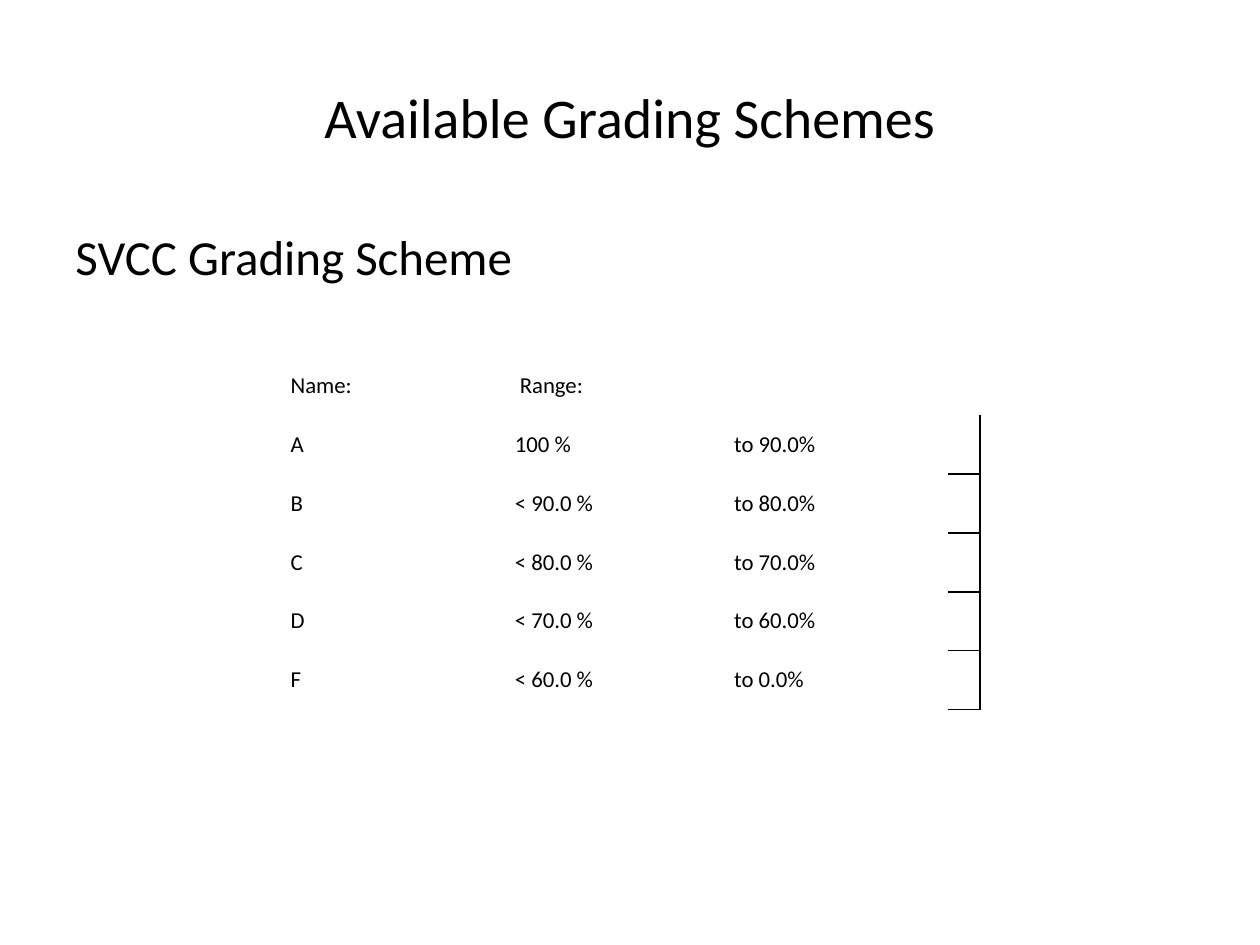
from dataclasses import dataclass

from lxml import etree
from pptx import Presentation
from pptx import util as u
from pptx.dml.color import RGBColor
from pptx.enum import text
from pptx.oxml import ns

COLORS = {"ink": "000000", "paper": "FFFFFF"}
FONT = "Calibri"
NO_GRID_STYLE = "{2D5ABB26-0587-4C30-8999-92F81FD0307C}"
COLUMN_WIDTHS = (4.62, 4.42, 4.42, 0.64)
ROW_HEIGHT = 1.185
WIDE_MARGINS = (0.2, 0.1)
NARROW_MARGINS = (0.1, 0.05)


@dataclass
class Heading:
    words: str
    top: float
    height: float
    size: int
    align: text.PP_ALIGN
    anchor: text.MSO_ANCHOR


@dataclass
class Grade:
    name: str
    upper: str
    lower: str


HEADINGS = (
    Heading("Available Grading Schemes", 0.76, 3.18, 32,
            text.PP_ALIGN.CENTER, text.MSO_ANCHOR.MIDDLE),
    Heading("SVCC Grading Scheme", 4.45, 12.57, 28,
            text.PP_ALIGN.LEFT, text.MSO_ANCHOR.TOP),
)
GRADES = (
    Grade("A", "100 %", "to 90.0%"),
    Grade("B", "< 90.0 %", "to 80.0%"),
    Grade("C", "< 80.0 %", "to 70.0%"),
    Grade("D", "< 70.0 %", "to 60.0%"),
    Grade("F", "< 60.0 %", "to 0.0%"),
)


def write(paragraph, words: str, size: int) -> None:
    paragraph.text = words
    paragraph.font.name = FONT
    paragraph.font.size = u.Pt(size)
    paragraph.font.color.rgb = RGBColor.from_string(COLORS["ink"])


def add_heading(slide, heading: Heading) -> None:
    box = slide.shapes.add_textbox(
        u.Cm(1.27), u.Cm(heading.top), u.Cm(22.86), u.Cm(heading.height))
    frame = box.text_frame
    frame.word_wrap = True
    frame.vertical_anchor = heading.anchor
    para = frame.paragraphs[0]
    write(para, heading.words, heading.size)
    para.alignment = heading.align


def fill_cell(cell, words: str, margins: tuple[float, float]) -> None:
    side, edge = margins
    cell.margin_left = cell.margin_right = u.Cm(side)
    cell.margin_top = cell.margin_bottom = u.Cm(edge)
    cell.vertical_anchor = text.MSO_ANCHOR.MIDDLE
    cell.fill.solid()
    cell.fill.fore_color.rgb = RGBColor.from_string(COLORS["paper"])
    write(cell.text_frame.paragraphs[0], words, 13)


def add_borders(cell, sides: tuple[str, ...]) -> None:
    """Draw thin lines on the given cell sides, such as lnR or lnB."""
    properties = cell._tc.get_or_add_tcPr()
    for side in sides:
        line = etree.SubElement(properties, ns.qn(f"a:{side}"), w=str(u.Pt(1)))
        fill = etree.SubElement(line, ns.qn("a:solidFill"))
        etree.SubElement(fill, ns.qn("a:srgbClr"), val=COLORS["ink"])


def add_grade_table(slide) -> None:
    row_count = len(GRADES) + 1
    frame = slide.shapes.add_table(
        row_count, len(COLUMN_WIDTHS), u.Cm(5.66), u.Cm(7.19),
        u.Cm(sum(COLUMN_WIDTHS)), u.Cm(ROW_HEIGHT * row_count))
    table = frame.table
    table.first_row = table.horz_banding = False
    table._tbl.tblPr.find(ns.qn("a:tableStyleId")).text = NO_GRID_STYLE
    for column, width in zip(table.columns, COLUMN_WIDTHS):
        column.width = u.Cm(width)
    for row in table.rows:
        row.height = u.Cm(ROW_HEIGHT)

    table.cell(0, 1).merge(table.cell(0, 3))
    fill_cell(table.cell(0, 0), "Name:", WIDE_MARGINS)
    fill_cell(table.cell(0, 1), "Range:", WIDE_MARGINS)
    for index, grade in enumerate(GRADES, start=1):
        fill_cell(table.cell(index, 0), grade.name, WIDE_MARGINS)
        fill_cell(table.cell(index, 1), grade.upper, NARROW_MARGINS)
        fill_cell(table.cell(index, 2), grade.lower, NARROW_MARGINS)
        add_borders(table.cell(index, 3), ("lnR", "lnB"))


def main() -> None:
    deck = Presentation()
    deck.slide_width, deck.slide_height = u.Cm(25.4), u.Cm(19.05)
    slide = deck.slides.add_slide(deck.slide_layouts[6])
    for heading in HEADINGS:
        add_heading(slide, heading)
    add_grade_table(slide)
    deck.save("out.pptx")


if __name__ == "__main__":
    main()
